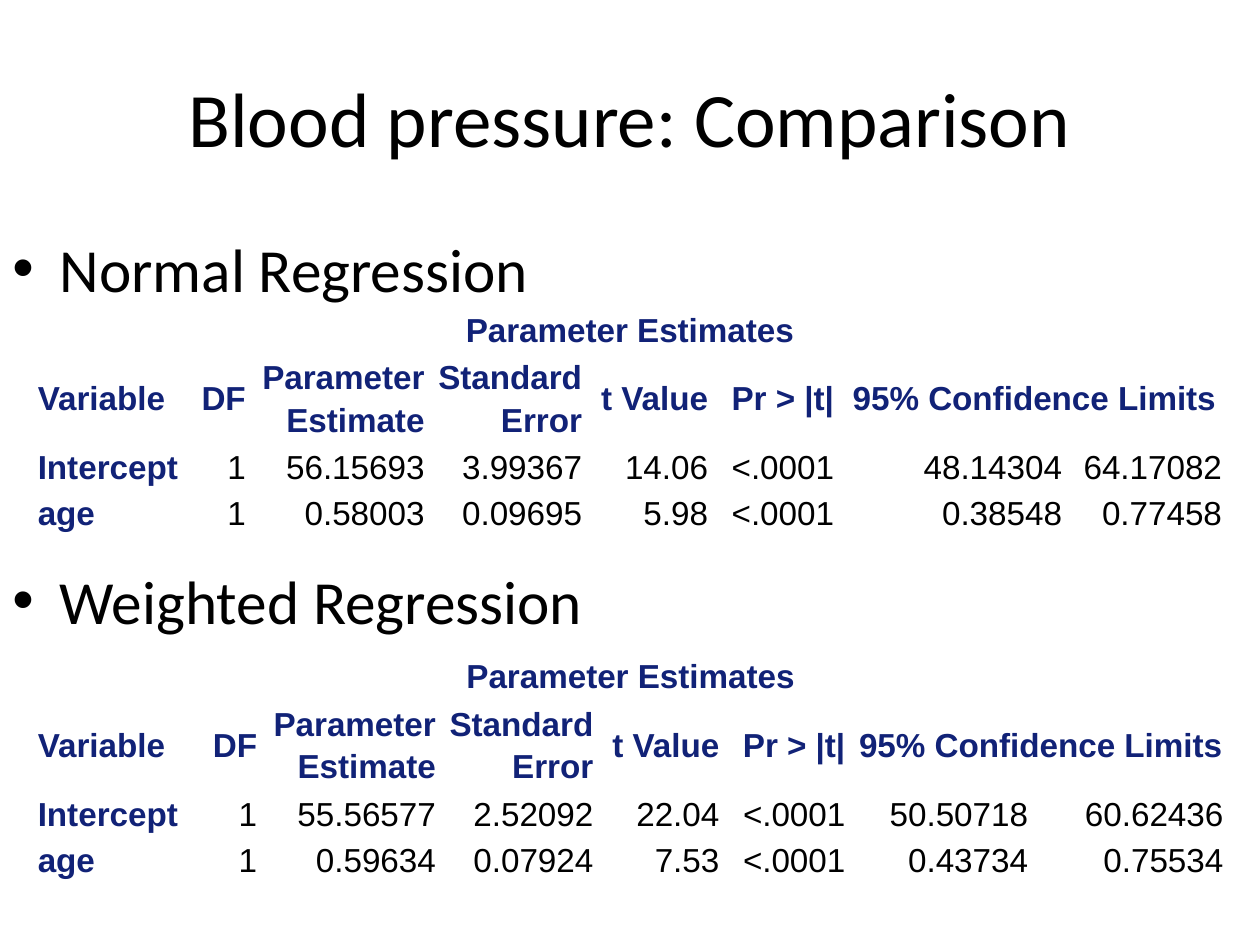
from dataclasses import dataclass

from lxml import etree
from pptx import Presentation
from pptx.dml.color import RGBColor
from pptx.enum.text import MSO_ANCHOR, PP_ALIGN
from pptx.oxml.ns import qn
from pptx.util import Pt

LEFT, CENTER, RIGHT = PP_ALIGN.LEFT, PP_ALIGN.CENTER, PP_ALIGN.RIGHT
MIDDLE, TOP = MSO_ANCHOR.MIDDLE, MSO_ANCHOR.TOP
BLACK = "000000"
NAVY = "112277"
ROW_HEIGHT = 24.3
HEADERS = ["Variable", "DF", "Parameter\nEstimate", "Standard\nError",
           "t Value", "Pr > |t|", "95% Confidence Limits", ""]


@dataclass
class Estimates:
    top: float
    widths: list[float]
    rows: list[list[str]]


@dataclass
class Bullet:
    text: str
    before: float


TABLES = [
    Estimates(372.2, [95.8, 36.7, 102.2, 90, 72, 72, 104.4, 111.6], [
        ["Intercept", "1", "55.56577", "2.52092", "22.04", "<.0001", "50.50718", "60.62436"],
        ["age", "1", "0.59634", "0.07924", "7.53", "<.0001", "0.43734", "0.75534"],
    ]),
    Estimates(174.2, [90, 36, 102.2, 90, 72, 72, 130.3, 91.4], [
        ["Intercept", "1", "56.15693", "3.99367", "14.06", "<.0001", "48.14304", "64.17082"],
        ["age", "1", "0.58003", "0.09695", "5.98", "<.0001", "0.38548", "0.77458"],
    ]),
]
BULLETS = [Bullet("Normal Regression", 0), Bullet("Weighted Regression", 147.6)]


def rgb(color: str) -> RGBColor:
    return RGBColor.from_string(color)


def add_run(p, text: str, size: float, font: str, color: str, bold: bool = False) -> None:
    r = p.add_run()
    r.text = text
    r.font.size = Pt(size)
    r.font.name = font
    r.font.bold = bold
    r.font.color.rgb = rgb(color)


def add_title(s, text: str) -> None:
    sp = s.shapes.title
    sp.left, sp.top, sp.width, sp.height = Pt(36), Pt(21.6), Pt(648), Pt(90)
    tf = sp.text_frame
    tf.vertical_anchor = MIDDLE
    p = tf.paragraphs[0]
    p.alignment = CENTER
    add_run(p, text, 44, "Calibri", BLACK)


def add_bullets(s, bullets: list[Bullet]) -> None:
    sp = s.shapes.add_textbox(Pt(0), Pt(128.5), Pt(720), Pt(354))
    tf = sp.text_frame
    tf.word_wrap = True
    tf.vertical_anchor = TOP
    for i, bullet in enumerate(bullets):
        p = tf.paragraphs[0] if i == 0 else tf.add_paragraph()
        p.space_before = Pt(bullet.before)
        pPr = p._p.get_or_add_pPr()
        pPr.set("marL", str(Pt(27)))
        pPr.set("indent", str(Pt(-27)))
        etree.SubElement(pPr, qn("a:buFont")).set("typeface", "Arial")
        etree.SubElement(pPr, qn("a:buChar")).set("char", "•")
        add_run(p, bullet.text, 35, "Calibri", BLACK)


def fill_cell(cell, text: str, align: PP_ALIGN, heading: bool) -> None:
    cell.fill.background()
    cell.vertical_anchor = MIDDLE
    cell.margin_left = cell.margin_right = Pt(3.6)
    cell.margin_top = cell.margin_bottom = Pt(0)
    p = cell.text_frame.paragraphs[0]
    p.alignment = align
    p.line_spacing = 1.15
    for i, line in enumerate(text.split("\n")):
        if i:
            p.add_line_break()
        if line:
            add_run(p, line, 19, "Arial", NAVY if heading else BLACK, heading)


def add_estimates(s, data: Estimates) -> None:
    cols = len(HEADERS)
    grid = [["Parameter Estimates"] + [""] * (cols - 1), HEADERS, *data.rows]
    heights = [ROW_HEIGHT, 2 * ROW_HEIGHT, ROW_HEIGHT, ROW_HEIGHT]
    frame = s.shapes.add_table(len(grid), cols, Pt(18), Pt(data.top),
                               Pt(sum(data.widths)), Pt(sum(heights)))
    table = frame.table
    table.first_row = table.horz_banding = False
    for col, width in zip(table.columns, data.widths):
        col.width = Pt(width)
    for row, height in zip(table.rows, heights):
        row.height = Pt(height)
    table.cell(0, 0).merge(table.cell(0, cols - 1))
    table.cell(1, cols - 2).merge(table.cell(1, cols - 1))
    for i, texts in enumerate(grid):
        for j, text in enumerate(texts):
            cell = table.cell(i, j)
            align = CENTER if cell.is_merge_origin else RIGHT if j else LEFT
            fill_cell(cell, text, align, i < 2 or j == 0)


def main() -> None:
    prs = Presentation()
    prs.slide_width, prs.slide_height = Pt(720), Pt(540)
    s = prs.slides.add_slide(prs.slide_layouts[5])
    add_title(s, "Blood pressure: Comparison")
    add_bullets(s, BULLETS)
    for data in TABLES:
        add_estimates(s, data)
    prs.save("out.pptx")


if __name__ == "__main__":
    main()
